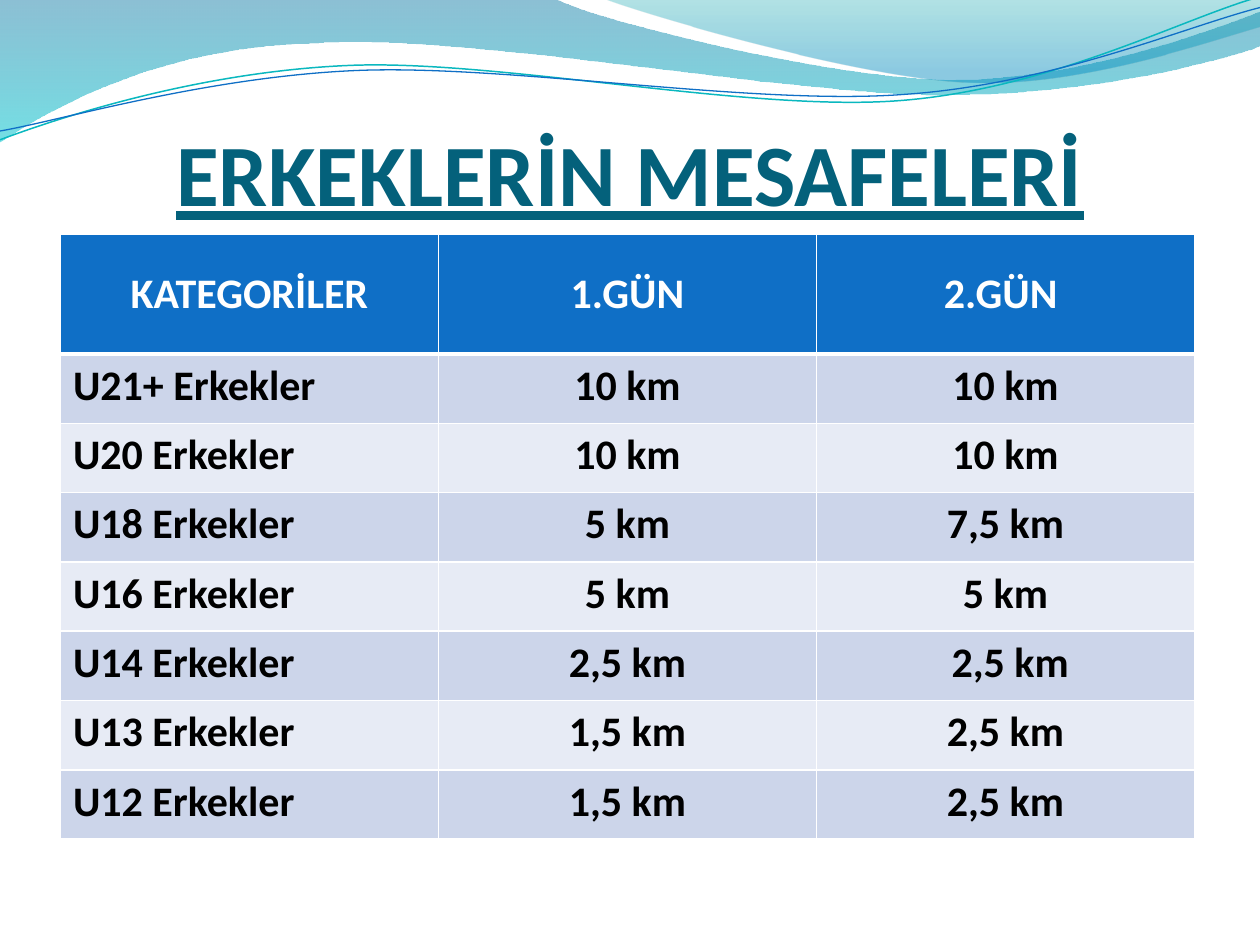
from lxml.etree import SubElement
from pptx import Presentation
from pptx.dml.color import RGBColor
from pptx.enum.text import MSO_ANCHOR, PP_ALIGN
from pptx.oxml.ns import qn
from pptx.util import Inches, Pt

WHITE = RGBColor(0xFF, 0xFF, 0xFF)
BLACK = RGBColor(0x00, 0x00, 0x00)
TITLE_TEAL = RGBColor(0x04, 0x61, 0x7B)
HEADER_BLUE = RGBColor(0x0F, 0x6F, 0xC6)
LINE_TEAL = RGBColor(0x0A, 0xB8, 0xBF)
BAND_DARK = RGBColor(0xCC, 0xD5, 0xEA)
BAND_LIGHT = RGBColor(0xE7, 0xEB, 0xF5)
WAVE_BLUE = RGBColor(0x00, 0x74, 0xA1)
WAVE_CYAN = RGBColor(0x00, 0xC6, 0xCF)
CREST_TEAL = RGBColor(0x00, 0xA1, 0xA9)
CREST_BLUE = RGBColor(0x00, 0x8B, 0xBF)

DISTANCES = [
    ("KATEGORİLER", "1.GÜN", "2.GÜN "),
    ("U21+ Erkekler", " 10 km ", "10 km"),
    ("U20 Erkekler", "10 km", "10 km"),
    ("U18 Erkekler", "5 km", "7,5 km"),
    ("U16 Erkekler", "5 km", "5 km"),
    ("U14 Erkekler", "2,5 km", " 2,5 km"),
    ("U13 Erkekler", "1,5 km", "2,5 km"),
    ("U12 Erkekler", "1,5 km", "2,5 km"),
]

BROAD_WAVE = [
    (0, 0), (4.4, -0.01),
    (4.76, 0.17, 6.64, 0.63, 7.58, 0.63), (8.53, 0.63, 9.58, 0.26, 10, 0.09),
    (10.01, 0.36),
    (9.83, 0.44, 8.7, 0.76, 7.46, 0.75), (6.22, 0.75, 3.82, 0.28, 2.57, 0.34),
    (1.29, 0.36, 0.46, 0.83, -0.01, 1.13), (0, 0),
]
CREST = [
    (4.79, -0.01),
    (5.09, 0.11, 6.82, 0.62, 7.69, 0.65), (8.56, 0.69, 9.61, 0.32, 10, 0.21),
    (10, 0), (4.79, -0.01),
]
TEAL_CURVE = [
    (0, 1.11),
    (0.48, 0.93, 1.58, 0.57, 2.77, 0.52), (3.95, 0.47, 5.93, 0.89, 7.13, 0.8),
    (8.33, 0.71, 9.38, 0.15, 9.98, -0.02),
]
BLUE_CURVE = [
    (0, 1.04),
    (0.47, 0.96, 1.64, 0.61, 2.83, 0.56), (4.03, 0.51, 5.97, 0.84, 7.17, 0.75),
    (8.36, 0.67, 9.41, 0.21, 10, 0.06),
]


class SlideBuilder:
    """Hold the style and the current slide, and add its elements."""

    font_name = "Calibri"

    def __init__(self, slide):
        self.slide = slide

    def format_text(self, paragraph, size, color, alignment):
        paragraph.alignment = alignment
        font = paragraph.font
        font.name = self.font_name
        font.size = Pt(size)
        font.bold = True
        font.color.rgb = color

    def add_outline(self, segments, close):
        points = [
            (Inches(segment[index]), Inches(segment[index + 1]))
            for segment in segments for index in range(0, len(segment), 2)
        ]
        builder = self.slide.shapes.build_freeform(*points[0])
        builder.add_line_segments(points[1:], close=close)
        shape = builder.convert_to_shape()
        shape.shadow.inherit = False
        lines = iter(list(shape.element.iter(qn("a:lnTo"))))
        for segment in segments[1:]:
            line = next(lines)
            if len(segment) == 6:
                line.tag = qn("a:cubicBezTo")
                for extra in (next(lines), next(lines)):
                    line.append(extra[0])
                    extra.getparent().remove(extra)
        return shape

    def add_wave(self, segments, stops):
        shape = self.add_outline(segments, close=True)
        shape.line.fill.background()
        shape.fill.gradient()
        shape.fill.gradient_angle = 270
        for stop, (position, color, opacity) in zip(shape.fill.gradient_stops, stops):
            stop.position = position
            stop.color.rgb = color
        color_elements = shape.element.spPr.iter(qn("a:srgbClr"))
        for element, (position, color, opacity) in zip(color_elements, stops):
            SubElement(element, qn("a:alpha"), val=str(opacity * 1000))

    def add_curve(self, segments, color, width):
        shape = self.add_outline(segments, close=False)
        shape.fill.background()
        shape.line.color.rgb = color
        shape.line.width = Pt(width)

    def add_title(self, text):
        title = self.slide.shapes.title
        title.left, title.top = Inches(0.5), Inches(0.77)
        title.width, title.height = Inches(9), Inches(1.01)
        frame = title.text_frame
        frame.text = text
        frame.word_wrap = True
        frame.vertical_anchor = MSO_ANCHOR.BOTTOM
        frame.margin_left = frame.margin_right = frame.margin_bottom = 0
        frame.margin_top = Inches(0.05)
        paragraph = frame.paragraphs[0]
        self.format_text(paragraph, 50, TITLE_TEAL, PP_ALIGN.CENTER)
        paragraph.font.underline = True
        title.element.getparent().append(title.element)

    def add_cell_borders(self, cell, bottom_width):
        properties = cell._tc.get_or_add_tcPr()
        for side, width in (("L", 1), ("R", 1), ("T", 1), ("B", bottom_width)):
            border = SubElement(properties, qn(f"a:ln{side}"), w=str(Pt(width)))
            fill = SubElement(border, qn("a:solidFill"))
            SubElement(fill, qn("a:srgbClr"), val=str(WHITE))

    def add_table(self, rows):
        table = self.slide.shapes.add_table(
            len(rows), len(rows[0]), Inches(0.48), Inches(1.86), Inches(9), Inches(4.8)
        ).table
        for row_index, values in enumerate(rows):
            is_header = row_index == 0
            table.rows[row_index].height = Inches(0.95 if is_header else 0.55)
            band = BAND_DARK if row_index % 2 else BAND_LIGHT
            for column_index, value in enumerate(values):
                cell = table.cell(row_index, column_index)
                cell.text = value
                if is_header:
                    cell.vertical_anchor = MSO_ANCHOR.MIDDLE
                    self.add_cell_borders(cell, 3)
                cell.fill.solid()
                cell.fill.fore_color.rgb = HEADER_BLUE if is_header else band
                centered = is_header or column_index > 0
                self.format_text(
                    cell.text_frame.paragraphs[0], 24, WHITE if is_header else BLACK,
                    PP_ALIGN.CENTER if centered else PP_ALIGN.LEFT,
                )


def main():
    presentation = Presentation()
    presentation.slide_width, presentation.slide_height = Inches(10), Inches(7.5)
    builder = SlideBuilder(presentation.slides.add_slide(presentation.slide_layouts[5]))
    builder.add_wave(BROAD_WAVE, [(0, WAVE_BLUE, 45), (1, WAVE_CYAN, 55)])
    builder.add_wave(CREST, [(0, CREST_TEAL, 30), (0.8, CREST_BLUE, 45)])
    builder.add_curve(TEAL_CURVE, LINE_TEAL, 0.85)
    builder.add_curve(BLUE_CURVE, HEADER_BLUE, 0.75)
    builder.add_title("ERKEKLERİN MESAFELERİ")
    builder.add_table(DISTANCES)
    presentation.save("out.pptx")


if __name__ == "__main__":
    main()
